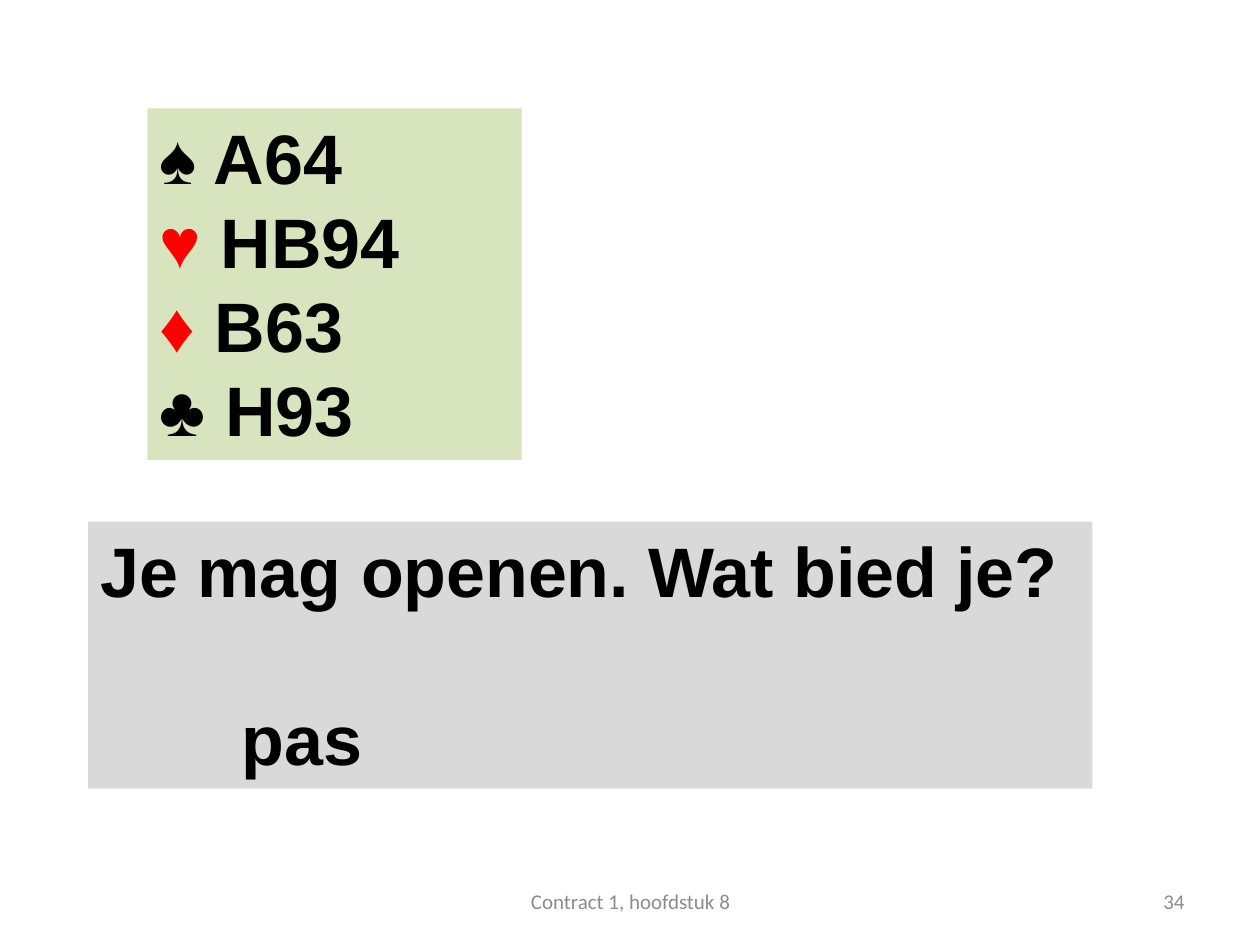
from dataclasses import dataclass

from pptx import Presentation
from pptx.dml.color import RGBColor
from pptx.enum.shapes import MSO_SHAPE
from pptx.enum.text import MSO_ANCHOR, PP_ALIGN
from pptx.util import Inches, Pt

RECTANGLE = MSO_SHAPE.RECTANGLE
TOP, MIDDLE = MSO_ANCHOR.TOP, MSO_ANCHOR.MIDDLE
LEFT, CENTER, RIGHT = PP_ALIGN.LEFT, PP_ALIGN.CENTER, PP_ALIGN.RIGHT

SLIDE_WIDTH, SLIDE_HEIGHT = Inches(10), Inches(7.5)
BLACK, RED, GREY = "000000", "FF0000", "8C8C8C"
CARD_GREEN, QUESTION_GREY = "D7E4BD", "D9D9D9"
LINE_HEIGHT = Pt(48)


@dataclass(frozen=True)
class Area:
    left: float
    top: float
    width: float
    height: float

    def lengths(self) -> tuple[int, int, int, int]:
        return (
            int(SLIDE_WIDTH * self.left / 100),
            int(SLIDE_HEIGHT * self.top / 100),
            int(SLIDE_WIDTH * self.width / 100),
            int(SLIDE_HEIGHT * self.height / 100),
        )


@dataclass(frozen=True)
class Suit:
    symbol: str
    cards: str
    color: str


@dataclass(frozen=True)
class Footer:
    area: Area
    text: str
    alignment: PP_ALIGN


HAND_AREA = Area(11.7, 11.47, 29.7, 37.2)
QUESTION_AREA = Area(7, 55.2, 79.7, 28.27)
HAND = (
    Suit("♠", "A64", BLACK),
    Suit("♥", "HB94", RED),
    Suit("♦", "B63", RED),
    Suit("♣", "H93", BLACK),
)
FOOTERS = (
    Footer(Area(71.7, 92.67, 23.3, 5.33), "34", RIGHT),
    Footer(Area(34.2, 92.67, 31.7, 5.33), "Contract 1, hoofdstuk 8", CENTER),
)


def rgb(color: str) -> RGBColor:
    return RGBColor.from_string(color)


def add_run(paragraph, text: str, color: str, size=40, font="Arial", bold=True) -> None:
    run = paragraph.add_run()
    run.text = text
    run.font.name = font
    run.font.size = Pt(size)
    run.font.bold = bold
    run.font.color.rgb = rgb(color)


def add_panel(slide, area: Area, fill: str, lines: int) -> list:
    panel = slide.shapes.add_shape(RECTANGLE, *area.lengths())
    panel.shadow.inherit = False
    panel.fill.solid()
    panel.fill.fore_color.rgb = rgb(fill)
    panel.line.fill.background()
    frame = panel.text_frame
    frame.word_wrap = True
    frame.vertical_anchor = TOP
    paragraphs = [frame.paragraphs[0]]
    paragraphs += [frame.add_paragraph() for _ in range(lines - 1)]
    for paragraph in paragraphs:
        paragraph.alignment = LEFT
        paragraph.line_spacing = LINE_HEIGHT
    return paragraphs


def add_hand(slide) -> None:
    lines = add_panel(slide, HAND_AREA, CARD_GREEN, len(HAND))
    for line, suit in zip(lines, HAND):
        add_run(line, suit.symbol, suit.color)
        add_run(line, f" {suit.cards}", BLACK)


def add_question(slide) -> None:
    question, answer = add_panel(slide, QUESTION_AREA, QUESTION_GREY, 2)
    add_run(question, "Je mag openen. Wat bied je?", BLACK)
    answer.space_before = LINE_HEIGHT
    answer._p.get_or_add_pPr().set("marL", str(Inches(1.12)))
    add_run(answer, "pas", BLACK)


def add_footer(slide, footer: Footer) -> None:
    frame = slide.shapes.add_textbox(*footer.area.lengths()).text_frame
    frame.word_wrap = True
    frame.vertical_anchor = MIDDLE
    line = frame.paragraphs[0]
    line.alignment = footer.alignment
    add_run(line, footer.text, GREY, size=12, font="Calibri", bold=False)


def main() -> None:
    deck = Presentation()
    deck.slide_width, deck.slide_height = SLIDE_WIDTH, SLIDE_HEIGHT
    slide = deck.slides.add_slide(deck.slide_layouts[6])
    add_hand(slide)
    add_question(slide)
    for footer in FOOTERS:
        add_footer(slide, footer)
    deck.save("out.pptx")


if __name__ == "__main__":
    main()
